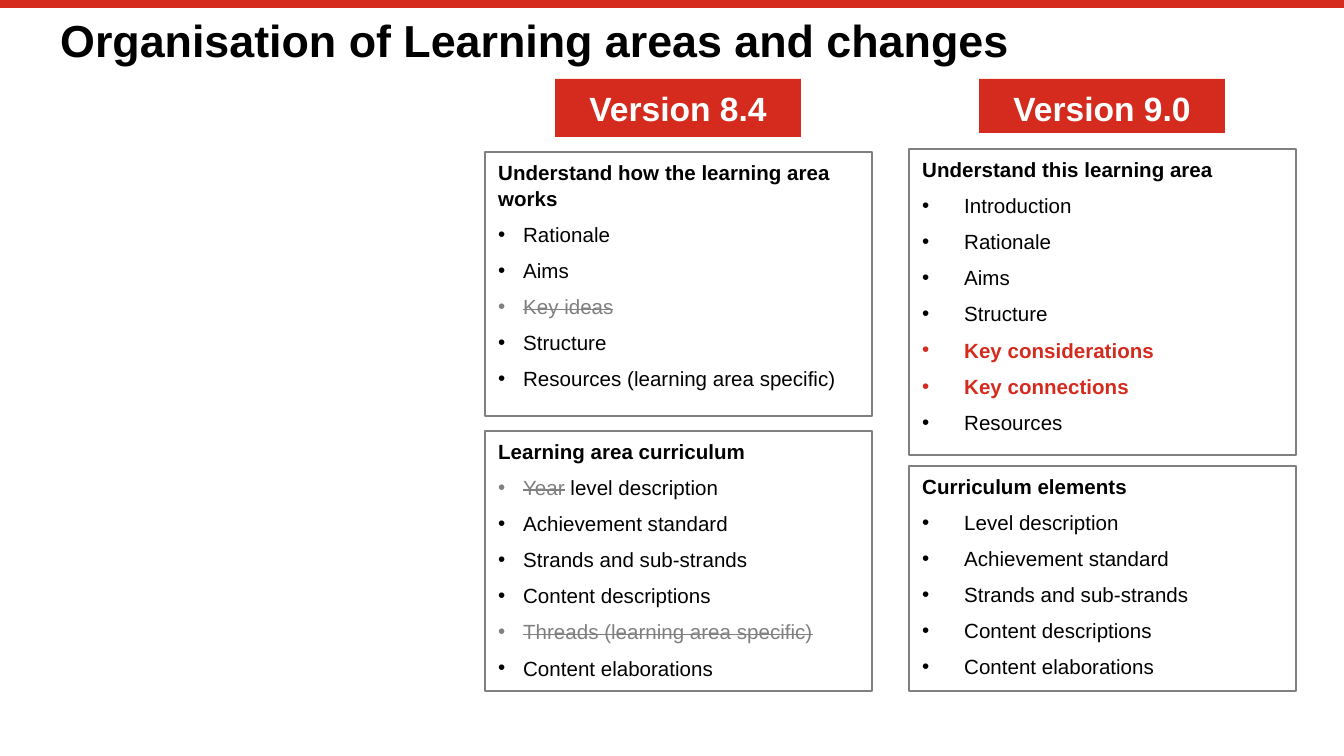
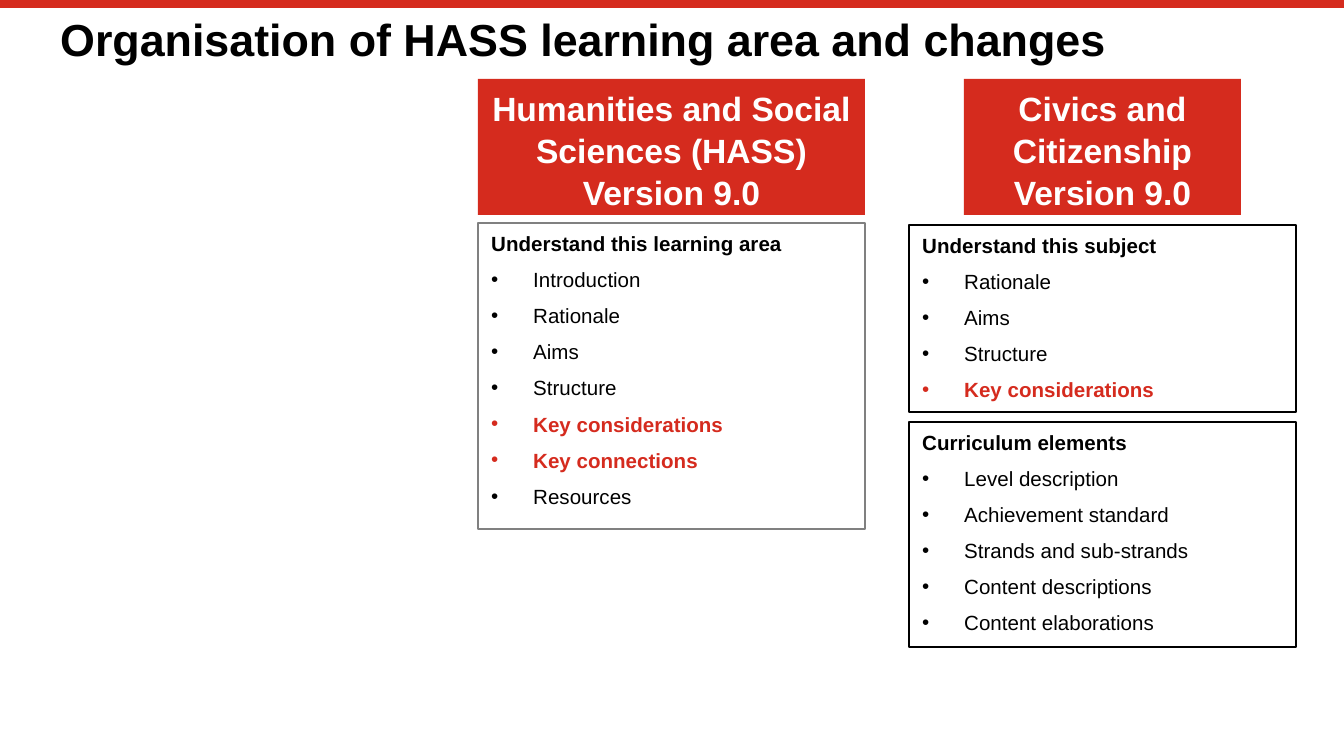
from lxml import etree
from pptx import Presentation
from pptx.dml.color import RGBColor
from pptx.enum.shapes import MSO_CONNECTOR, MSO_SHAPE
from pptx.enum.text import MSO_ANCHOR as ANCHOR, PP_ALIGN as ALIGN
from pptx.oxml.ns import qn
from pptx.util import Emu, Pt

RED = RGBColor(0xD5, 0x2B, 0x1E)
GREY = RGBColor(0x80, 0x80, 0x80)
BLACK = RGBColor(0, 0, 0)
WHITE = RGBColor(255, 255, 255)

SLIDE_W, SLIDE_H = 1344, 756
PANEL_W = 387
COLUMN_TOP = 79
WIDE, NARROW = 42, 25  # bullet indents

TITLE = dict(size=Pt(24), bold=True, color=BLACK)
BANNER = dict(size=Pt(18), bold=True, color=WHITE)
HEADING = dict(size=Pt(11), bold=True, color=BLACK)
ITEM = dict(HEADING, bold=False)
NEW = dict(ITEM, bold=True, color=RED)
GONE = dict(ITEM, color=GREY, strike=True)

# An item is plain text, or a list of (text, style) runs
KEY_CONSIDERATIONS = [("Key considerations", NEW)]
LEARNING_AREA = ["Introduction", "Rationale", "Aims", "Structure", KEY_CONSIDERATIONS,
                 [("Key connections", NEW)], "Resources"]
SHARED = ["Achievement standard", "Strands and sub-strands", "Content descriptions"]
ELEMENTS = ["Level description", *SHARED, "Content elaborations"]
OLD_AREA = ["Rationale", "Aims", [("Key ideas", GONE)], "Structure",
            "Resources (learning area specific)"]
OLD_CURRICULUM = [[("Year", GONE), (" level description", ITEM)], *SHARED,
                  [("Threads (learning area specific)", GONE)], "Content elaborations"]


def px(n):
    return Emu(round(n * 914400 / 134.4))


def box(*lengths):
    return [px(n) for n in lengths]


def add_run(p, text, style):
    r = p.add_run()
    r.text = text
    r.font.name = "Arial"
    for key, value in style.items():
        if key == "color":
            r.font.color.rgb = value
        elif key == "strike":
            r.font._element.set("strike", "sngStrike")
        else:
            setattr(r.font, key, value)


def add_bullet(p, indent):
    pPr = p._p.get_or_add_pPr()
    pPr.set("marL", str(px(indent)))
    pPr.set("indent", str(-px(indent)))
    etree.SubElement(pPr, qn("a:buFont")).set("typeface", "Arial")
    etree.SubElement(pPr, qn("a:buChar")).set("char", "•")


def write(tf, paragraphs, **fmt):
    """Fill a text frame; each paragraph is a list of (text, style) runs."""
    tf.word_wrap = True
    tf.vertical_anchor = ANCHOR.TOP
    for i, runs in enumerate(paragraphs):
        p = tf.add_paragraph() if i else tf.paragraphs[0]
        for key, value in fmt.items():
            setattr(p, key, value)
        for text, style in runs:
            add_run(p, text, style)
    return tf.paragraphs


def add_rect(s, x, y, w, h, fill=None, line=None):
    sp = s.shapes.add_shape(MSO_SHAPE.RECTANGLE, *box(x, y, w, h))
    sp.shadow.inherit = False
    if fill is None:
        sp.fill.background()
    else:
        sp.fill.solid()
        sp.fill.fore_color.rgb = fill
    if line is None:
        sp.line.fill.background()
    else:
        sp.line.color.rgb = line
        sp.line.width = Pt(1)
    return sp.text_frame


def add_banner(s, x, y, w, h, lines):
    tf = add_rect(s, x, y, w, h, fill=RED)
    write(tf, [[(t, BANNER)] for t in lines], alignment=ALIGN.CENTER, line_spacing=1.05)


def add_panel(s, x, y, w, h, heading, items, line, indent):
    tf = add_rect(s, x, y, w, h, line=line)
    rows = [[(i, ITEM)] if isinstance(i, str) else i for i in items]
    ps = write(tf, [[(heading, HEADING)]] + rows, alignment=ALIGN.LEFT, line_spacing=1.05)
    for p in ps[1:]:
        p.space_before = Pt(5.5)
        add_bullet(p, indent)


def add_column(s, x, y, banner, panels, line=GREY, indent=WIDE):
    """Banner centred over a stack of panels: (gap above, height, heading, items)."""
    w, h, lines = banner
    add_banner(s, x + (PANEL_W - w) // 2, y, w, h, lines)
    y += h
    for gap, height, heading, items in panels:
        y += gap
        add_panel(s, x, y, PANEL_W, height, heading, items, line, indent)
        y += height


def add_slide(prs, title, title_top):
    s = prs.slides.add_slide(prs.slide_layouts[6])
    # Top band
    band = s.shapes.add_connector(MSO_CONNECTOR.STRAIGHT, *box(0, 4, SLIDE_W, 4))
    band.line.color.rgb = RED
    band.line.width = Pt(4.2)
    etree.SubElement(band._element.spPr, qn("a:effectLst"))
    # Title
    tb = s.shapes.add_textbox(*box(47, title_top, 1249, 52))
    write(tb.text_frame, [[(title, TITLE)]], line_spacing=0.9)
    return s


def versions_slide(prs):
    s = add_slide(prs, "Organisation of Learning areas and changes", 12)
    add_column(s, 485, COLUMN_TOP, (246, 58, ["Version 8.4"]), [
        (15, 264, "Understand how the learning area works", OLD_AREA),
        (15, 260, "Learning area curriculum", OLD_CURRICULUM),
    ], indent=NARROW)
    add_column(s, 909, COLUMN_TOP, (246, 54, ["Version 9.0"]), [
        (16, 306, "Understand this learning area", LEARNING_AREA),
        (11, 225, "Curriculum elements", ELEMENTS),
    ])


def hass_slide(prs):
    s = add_slide(prs, "Organisation of HASS learning area and changes", 11)
    hass = ["Humanities and Social Sciences (HASS)", "Version 9.0"]
    add_column(s, 478, COLUMN_TOP, (PANEL_W, 136, hass), [
        (8, 306, "Understand this learning area", LEARNING_AREA),
    ])
    civics = ["Civics and Citizenship", "Version 9.0"]
    subject = ["Rationale", "Aims", "Structure", KEY_CONSIDERATIONS]
    add_column(s, 909, COLUMN_TOP, (277, 136, civics), [
        (10, 187, "Understand this subject", subject),
        (10, 225, "Curriculum elements", ELEMENTS),
    ], line=BLACK)


def main():
    prs = Presentation()
    prs.slide_width, prs.slide_height = box(SLIDE_W, SLIDE_H)
    versions_slide(prs)
    hass_slide(prs)
    prs.save("out.pptx")


if __name__ == "__main__":
    main()
